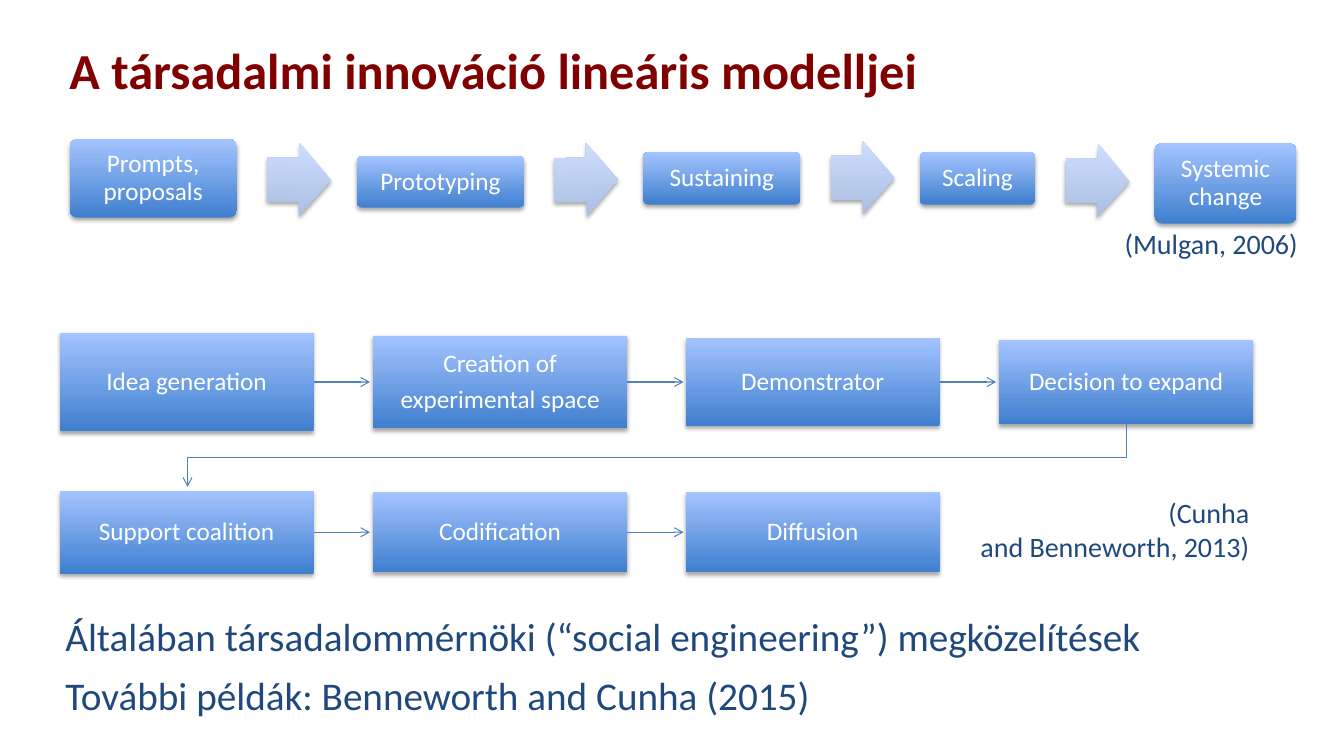
from lxml.etree import SubElement
from pptx import Presentation
from pptx.dml.color import RGBColor
from pptx.enum.shapes import MSO_CONNECTOR as Connector, MSO_SHAPE as Shape
from pptx.enum.text import MSO_ANCHOR as Anchor, PP_ALIGN as Align
from pptx.oxml.ns import qn
from pptx.util import Pt

PX = 9144
FONT = "Calibri"
MAROON = RGBColor(0x80, 0x00, 0x00)
NAVY = RGBColor(0x1F, 0x49, 0x7D)
WHITE = RGBColor(0xFF, 0xFF, 0xFF)
LINE_BLUE = RGBColor(0x4F, 0x81, 0xBD)
BOX_BLUES = RGBColor(0x3F, 0x7F, 0xCE), RGBColor(0xA4, 0xC4, 0xFF)
ARROW_BLUES = RGBColor(0xAD, 0xBF, 0xE1), RGBColor(0xCC, 0xDD, 0xFF)

STAGES = [
    ("Prompts, proposals", 69, 138, 166, 78),
    ("Prototyping", 354, 155, 166, 51),
    ("Sustaining", 638, 151, 156, 52),
    ("Scaling", 912, 151, 115, 52),
    ("Systemic change", 1145, 142, 141, 80),
]
STAGE_ARROWS = [(142, 0.6), (142, -0.6), (140, 0), (143, 1.2)]
STEP_ROWS = [
    (379, [
        (["Idea generation"], 98),
        (["Creation of", "experimental space"], 92),
        (["Demonstrator"], 87),
        (["Decision to expand"], 84),
    ]),
    (528, [
        (["Support coalition"], 82),
        (["Codification"], 80),
        (["Diffusion"], 80),
    ]),
]
STEP_WIDTH = 252


def px(*lengths):
    return [round(length * PX) for length in lengths]


def apply(target, values):
    for name, value in values.items():
        setattr(target, name, value)


def write(box, lines, size, color, align=Align.LEFT, anchor=Anchor.TOP,
          bold=False, spacing=1.0, gap=0, inset=None):
    frame = box.text_frame
    apply(frame, {"word_wrap": True, "vertical_anchor": anchor})
    if inset is not None:
        sides = ("left", "top", "right", "bottom")
        apply(frame, {f"margin_{side}": inset * PX for side in sides})
    for index, line in enumerate(lines):
        para = frame.add_paragraph() if index else frame.paragraphs[0]
        para.text = line
        apply(para, {"alignment": align, "line_spacing": spacing,
                     "space_before": Pt(gap if index else 0)})
        for span in para.runs:
            apply(span.font, {"name": FONT, "size": Pt(size), "bold": bold})
            span.font.color.rgb = color


def add_text(page, bounds, lines, size, color, **style):
    write(page.shapes.add_textbox(*px(*bounds)), lines, size, color, **style)


def add_block(page, kind, bounds, colors):
    block = page.shapes.add_shape(kind, *px(*bounds))
    block.line.fill.background()
    block.fill.gradient()
    block.fill.gradient_angle = 90
    for stop, color in zip(block.fill.gradient_stops, colors):
        stop.color.rgb = color
    block.shadow.inherit = False
    effects = block._element.spPr.find(qn("a:effectLst"))
    shadow = SubElement(effects, qn("a:outerShdw"), blurRad=str(Pt(3.1)),
                        dist=str(Pt(1.8)), dir="5400000", rotWithShape="0")
    black = SubElement(shadow, qn("a:srgbClr"), val="000000")
    SubElement(black, qn("a:alpha"), val="35000")
    return block


def add_stage(page, label, *bounds):
    stage = add_block(page, Shape.ROUNDED_RECTANGLE, bounds, BOX_BLUES)
    stage.adjustments[0] = 0.1
    write(stage, [label], 18, WHITE, Align.CENTER, Anchor.MIDDLE,
          spacing=0.9, inset=7)


def add_stage_arrow(page, left, top, angle):
    arrow = add_block(page, Shape.RIGHT_ARROW, (left, top, 63, 73), ARROW_BLUES)
    arrow.rotation = angle
    arrow.adjustments[0] = 0.6
    arrow.adjustments[1] = 0.5


def add_step(page, lines, left, middle, height):
    bounds = (left, middle - height / 2, STEP_WIDTH, height)
    step = add_block(page, Shape.RECTANGLE, bounds, BOX_BLUES)
    write(step, lines, 18, WHITE, Align.CENTER, Anchor.MIDDLE,
          spacing=0.9, gap=6.3, inset=14)


def finish_line(shape):
    shape.line.color.rgb = LINE_BLUE
    shape.line.width = Pt(0.75)
    SubElement(shape.line._get_or_add_ln(), qn("a:tailEnd"), type="arrow")


def add_link(page, left, right, middle):
    link = page.shapes.add_connector(Connector.STRAIGHT,
                                     *px(left, middle, right, middle))
    finish_line(link)
    SubElement(link._element.spPr, qn("a:effectLst"))


def add_return_link(page, points):
    builder = page.shapes.build_freeform(*points[0], scale=PX)
    builder.add_line_segments(points[1:], close=False)
    link = builder.convert_to_shape()
    link.fill.background()
    finish_line(link)
    link.shadow.inherit = False


def main():
    deck = Presentation()
    apply(deck, {"slide_width": 1333 * PX, "slide_height": 750 * PX})
    page = deck.slides.add_slide(deck.slide_layouts[6])

    add_text(page, (59, 24, 1242, 97),
             ["A társadalmi innováció lineáris modelljei"], 36, MAROON,
             anchor=Anchor.MIDDLE, bold=True, spacing=0.9)

    for stage in STAGES:
        add_stage(page, *stage)
    for (_, left, _, width, _), (top, angle) in zip(STAGES, STAGE_ARROWS):
        add_stage_arrow(page, left + width + 30, top, angle)

    for middle, steps in STEP_ROWS:
        for column, (lines, height) in enumerate(steps):
            left = round(59 + column * 932 / 3)
            add_step(page, lines, left, middle, height)
            if column < len(steps) - 1:
                right = left + STEP_WIDTH
                add_link(page, right, right + 56, middle)
    add_return_link(page, [(1117, 421), (1117, 454), (186, 454), (186, 483)])

    add_text(page, (789, 220, 508, 44), ["(Mulgan, 2006)"], 20, NAVY,
             align=Align.RIGHT)
    add_text(page, (957, 487, 292, 77), ["(Cunha\vand Benneworth, 2013)"],
             20, NAVY, align=Align.RIGHT)
    add_text(page, (55, 603, 1199, 116),
             ["Általában társadalommérnöki (“social engineering”) megközelítések",
              "További példák: Benneworth and Cunha (2015)"], 28, NAVY, gap=8)
    deck.save("out.pptx")


if __name__ == "__main__":
    main()
